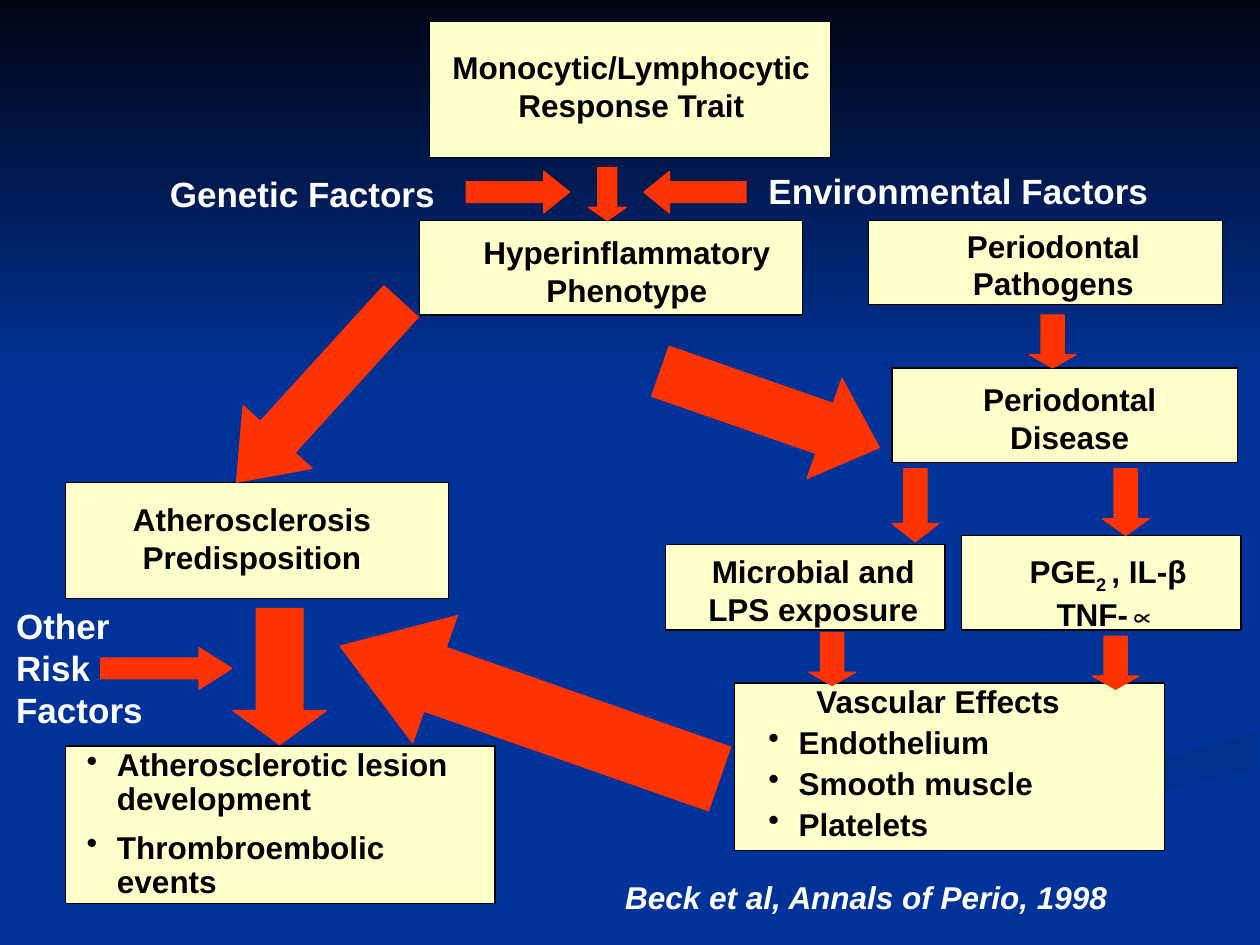
"""Build the slide linking periodontal disease, inflammation and atherosclerosis."""
from dataclasses import dataclass

from lxml import etree
from pptx import Presentation
from pptx.dml.color import RGBColor
from pptx.enum.shapes import MSO_SHAPE
from pptx.enum.text import PP_ALIGN
from pptx.oxml.ns import qn
from pptx.util import Inches, Pt

RECTANGLE = MSO_SHAPE.RECTANGLE
DOWN, LEFT, RIGHT = MSO_SHAPE.DOWN_ARROW, MSO_SHAPE.LEFT_ARROW, MSO_SHAPE.RIGHT_ARROW
CENTER, START = PP_ALIGN.CENTER, PP_ALIGN.LEFT


@dataclass(frozen=True)
class Theme:
    font: str = "Arial"
    backdrop: str = "003399"
    night: str = "000514"
    swoosh: str = "002F8C"
    box: str = "FFFFCC"
    arrow: str = "FF3300"
    ink: str = "000000"
    light: str = "FFFFFF"
    body: int = 18
    factor: int = 20
    line: float = 0.75


THEME = Theme()
BULLET_INDENT = Inches(0.24)
LABEL_HEIGHT = 0.7
HEAD_SHARE = 0.25

SWOOSH = [(5.03, 7.49), (6.3, 6.93), (7.64, 6.47), (9.98, 5.81),
          (9.98, 6.09), (7.85, 6.61), (6.49, 7.1), (5.71, 7.49)]

BOXES = [
    ((3.41, 0.17, 3.18, 1.08), (3.22, 0.33, 3.58), ["Monocytic/Lymphocytic Response Trait"]),
    ((3.33, 1.75, 3.04, 0.75), (3.42, 1.8, 3.11), ["Hyperinflammatory Phenotype"]),
    ((6.89, 1.75, 2.81, 0.67), (7.42, 1.75, 1.88), ["Periodontal Pathogens"]),
    ((0.52, 3.83, 3.04, 0.92), (0.37, 3.92, 3.26), ["Atherosclerosis Predisposition"]),
    ((7.08, 2.92, 2.74, 0.75), (7.42, 2.97, 2.14), ["Periodontal Disease"]),
    ((5.28, 4.32, 2.22, 0.68), (5.42, 4.33, 2.07), ["Microbial and LPS exposure"]),
    ((7.63, 4.25, 2.22, 0.75), (7.83, 4.33, 1.93), ["PGE", ("2 ", -25000), ", IL-β TNF-∝"]),
]

FACTORS = [
    ((1.25, 1.32, 2.37, 0.43), "Genetic Factors"),
    ((6, 1.3, 3.41, 0.43), "Environmental Factors"),
    ((0.03, 4.75, 1.26, 1.1), "Other Risk Factors"),
]

LISTS = [
    ((0.52, 5.92, 3.41, 1.25), (0.59, 5.9, 3.26, 1.3), None,
     ["Atherosclerotic lesion development", "Thrombroembolic events"], 0.9, 8.3),
    ((5.83, 5.42, 3.41, 1.33), (6, 5.42, 2.96, 1.33), "Vascular Effects ",
     ["Endothelium", "Smooth muscle", "Platelets"], 0.8, 6.2),
]

CITATION = ((4.75, 6.92, 4.25, 0.4), "Beck et al, Annals of Perio, 1998")

ARROWS = [
    (DOWN, (4.67, 1.33, 0.3, 0.42), 0),
    (RIGHT, (3.7, 1.36, 0.82, 0.33), 0),
    (RIGHT, (5.11, 1.36, 0.81, 0.33), 180),
    (LEFT, (1.56, 2.74, 1.94, 0.74), 312.3),
    (DOWN, (8.17, 2.5, 0.37, 0.42), 0),
    (DOWN, (7.08, 3.72, 0.37, 0.58), 0),
    (DOWN, (8.75, 3.72, 0.37, 0.53), 0),
    (DOWN, (1.85, 4.83, 0.74, 1.08), 0),
    (RIGHT, (0.8, 5.14, 1.04, 0.33), 0),
    (DOWN, (6.42, 5.02, 0.37, 0.42), 0),
    (DOWN, (8.67, 5.05, 0.37, 0.42), 0),
    (LEFT, (2.61, 5.12, 3.19, 1.07), 19.3),
    (RIGHT, (5.19, 2.83, 1.84, 0.84), 19.2),
]


def color(code):
    return RGBColor.from_string(code)


def shade(shape, first, last):
    shape.shadow.inherit = False
    shape.line.fill.background()
    shape.fill.gradient()
    shape.fill.gradient_angle = 270
    for stop, code in zip(shape.fill.gradient_stops, (first, last)):
        stop.color.rgb = color(code)


def add_backdrop(page):
    page.background.fill.solid()
    page.background.fill.fore_color.rgb = color(THEME.backdrop)
    corners = [(Inches(x), Inches(y)) for x, y in SWOOSH]
    builder = page.shapes.build_freeform(*corners[0], scale=1.0)
    builder.add_line_segments(corners[1:], close=True)
    shade(builder.convert_to_shape(), THEME.swoosh, THEME.backdrop)
    sky = page.shapes.add_shape(RECTANGLE, 0, 0, Inches(10), Inches(3.08))
    shade(sky, THEME.night, THEME.backdrop)


def add_solid(page, preset, place, fill, line):
    shape = page.shapes.add_shape(preset, *map(Inches, place))
    shape.shadow.inherit = False
    shape.fill.solid()
    shape.fill.fore_color.rgb = color(fill)
    shape.line.color.rgb = color(line)
    shape.line.width = Pt(THEME.line)
    return shape


def add_text_frame(page, place):
    frame = page.shapes.add_textbox(*map(Inches, place)).text_frame
    frame.word_wrap = True
    return frame


def write(para, pieces, size=THEME.body, ink=THEME.ink, align=START, italic=None):
    para.alignment = align
    for piece in pieces:
        text, baseline = (piece, None) if isinstance(piece, str) else piece
        span = para.add_run()
        span.text = text
        span.font.name, span.font.size, span.font.bold = THEME.font, Pt(size), True
        span.font.italic = italic
        span.font.color.rgb = color(ink)
        if baseline:
            span._r.get_or_add_rPr().set("baseline", str(baseline))


def add_bullet(para):
    properties = para._p.get_or_add_pPr()
    properties.set("marL", str(BULLET_INDENT))
    properties.set("indent", str(-BULLET_INDENT))
    etree.SubElement(properties, qn("a:buChar")).set("char", "•")


def add_list(page, place, heading, items, spacing, gap):
    frame = add_text_frame(page, place)
    lines = ([heading] if heading else []) + items
    for index, text in enumerate(lines):
        para = frame.add_paragraph() if index else frame.paragraphs[0]
        para.line_spacing = spacing
        para.space_before = Pt(gap if index else 0)
        write(para, [text], align=CENTER if text == heading else START)
        if text != heading:
            add_bullet(para)


def add_arrow(page, preset, place, rotation):
    arrow = add_solid(page, preset, place, THEME.arrow, THEME.arrow)
    width, height = place[2:]
    arrow.adjustments[1] = HEAD_SHARE * max(width, height) / min(width, height)
    arrow.rotation = rotation


def main():
    deck = Presentation()
    deck.slide_width, deck.slide_height = Inches(10), Inches(7.5)
    page = deck.slides.add_slide(deck.slide_layouts[6])
    add_backdrop(page)
    for place, *_ in BOXES + LISTS:
        add_solid(page, RECTANGLE, place, THEME.box, THEME.ink)
    for _, place, pieces in BOXES:
        frame = add_text_frame(page, (*place, LABEL_HEIGHT))
        write(frame.paragraphs[0], pieces, align=CENTER)
    for place, text in FACTORS:
        write(add_text_frame(page, place).paragraphs[0], [text], THEME.factor, THEME.light)
    for _, *entry in LISTS:
        add_list(page, *entry)
    for arrow in ARROWS:
        add_arrow(page, *arrow)
    place, text = CITATION
    write(add_text_frame(page, place).paragraphs[0], [text], ink=THEME.light,
          align=CENTER, italic=True)
    deck.save("out.pptx")


if __name__ == "__main__":
    main()
